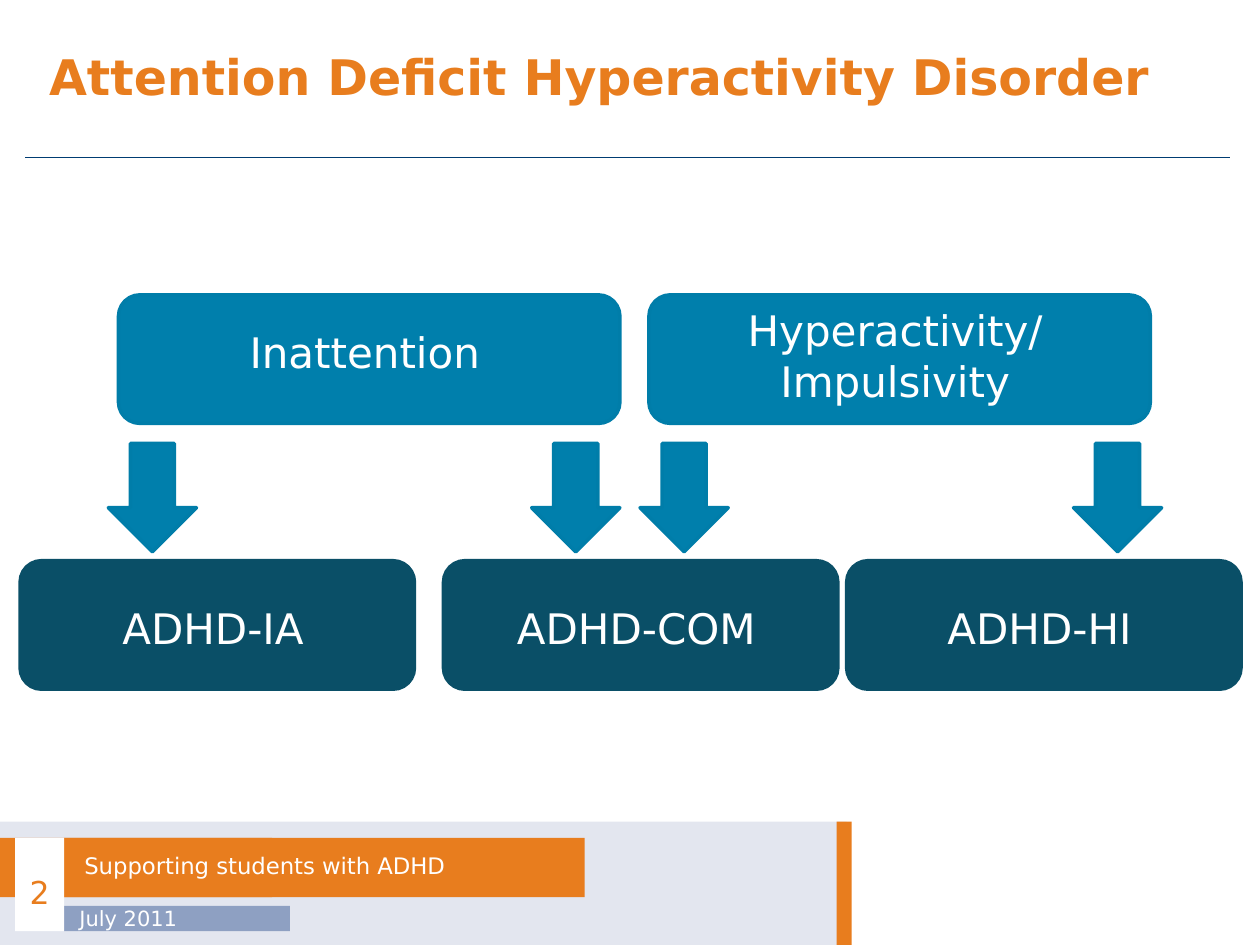
"""Build the slide on the types of Attention Deficit Hyperactivity Disorder."""
from typing import NamedTuple

import lxml.etree
import pptx
import pptx.dml.color
import pptx.enum.shapes
import pptx.enum.text
import pptx.oxml.ns
import pptx.util

Inches = pptx.util.Inches
Kind = pptx.enum.shapes.MSO_SHAPE
Align = pptx.enum.text.PP_ALIGN
Anchor = pptx.enum.text.MSO_ANCHOR

FONT = "DejaVu Sans"
ORANGE, WHITE, PALE, SLATE, NAVY = "E87D1E", "FFFFFF", "E3E6EF", "8EA0C2", "003C72"
BLUE, EDGE, DARK = "007FAC", "007DA9", "0A4F67"


class Box(NamedTuple):
    left: float
    top: float
    width: float
    height: float


class Style(NamedTuple):
    size: float
    color: str = WHITE
    bold: bool = False
    align: Align = Align.LEFT
    anchor: Anchor = Anchor.MIDDLE
    inset: tuple = (0.1, 0.05, 0.1, 0.05)
    space: float = 1.0


class Bar(NamedTuple):
    box: Box
    fill: str
    text: str = ""
    style: Style = Style(12)


class Node(NamedTuple):
    box: Box
    label: Box
    text: str
    fill: str
    edge: str


def tint(code: str) -> pptx.dml.color.RGBColor:
    """Turn a hex string into a colour."""
    return pptx.dml.color.RGBColor.from_string(code)


def place(box: Box) -> list:
    """Give the box as lengths."""
    return [Inches(n) for n in box]


def write(shape, text: str, style: Style) -> None:
    """Set one paragraph of text in a shape."""
    frame = shape.text_frame
    frame.word_wrap = True
    frame.vertical_anchor = style.anchor
    (frame.margin_left, frame.margin_top,
     frame.margin_right, frame.margin_bottom) = [Inches(n) for n in style.inset]
    para = frame.paragraphs[0]
    para.alignment = style.align
    para.line_spacing = style.space
    run = para.add_run()
    run.text = text
    run.font.name = FONT
    run.font.size = pptx.util.Pt(style.size)
    run.font.bold = style.bold
    run.font.color.rgb = tint(style.color)


def draw(slide, kind: Kind, box: Box, fill: str, edge: str = ""):
    """Add a flat shape, with an outline if an edge colour is given."""
    shape = slide.shapes.add_shape(kind, *place(box))
    shape.shadow.inherit = False
    shape.fill.solid()
    shape.fill.fore_color.rgb = tint(fill)
    if edge:
        shape.line.color.rgb = tint(edge)
        shape.line.width = pptx.util.Pt(2)
    else:
        shape.line.fill.background()
    return shape


def label(slide, box: Box, text: str, style: Style) -> None:
    """Add a text box."""
    write(slide.shapes.add_textbox(*place(box)), text, style)


def rule(slide, left: float, right: float, top: float) -> None:
    """Add the thin line under the title."""
    line = slide.shapes.add_connector(
        pptx.enum.shapes.MSO_CONNECTOR.STRAIGHT,
        Inches(left), Inches(top), Inches(right), Inches(top))
    line.line.color.rgb = tint(NAVY)
    line.line.width = pptx.util.Pt(0.5)
    lxml.etree.SubElement(line.element.spPr, pptx.oxml.ns.qn("a:effectLst"))


def band(slide, bar: Bar) -> None:
    """Add a footer bar with its text."""
    shape = draw(slide, Kind.RECTANGLE, bar.box, bar.fill)
    if bar.text:
        write(shape, bar.text, bar.style)


def card(slide, node: Node) -> None:
    """Add a rounded box and its centred label."""
    draw(slide, Kind.ROUNDED_RECTANGLE, node.box, node.fill, node.edge)
    label(slide, node.label, node.text, Style(24, align=Align.CENTER, anchor=Anchor.TOP))


def trait(left: float, top: float, height: float, text: str) -> Node:
    """Describe a box of the upper row."""
    return Node(Box(left, 2.34, 3.98, 1.02), Box(left + 0.08, top, 3.75, height),
                text, BLUE, EDGE)


def kind(left: float, text: str) -> Node:
    """Describe a box of the lower row."""
    return Node(Box(left, 4.45, 3.13, 1.02), Box(left + 0.06, 4.73, 2.94, 0.5),
                text, DARK, DARK)


BARS = [
    Bar(Box(0, 6.52, 6.72, 0.98), PALE),
    Bar(Box(0, 6.65, 2.16, 0.47), ORANGE),
    Bar(Box(6.72, 6.52, 3.28, 0.98), WHITE),
    Bar(Box(6.64, 6.52, 0.12, 0.98), ORANGE),
    Bar(Box(0.51, 7.19, 1.79, 0.2), SLATE, "July 2011",
        Style(12, inset=(0.12, 0, 0.12, 0))),
    Bar(Box(0.51, 6.65, 4.13, 0.47), ORANGE, "Supporting students with ADHD",
        Style(13, inset=(0.16, 0, 0.16, 0), space=0.9)),
    Bar(Box(0.12, 6.65, 0.39, 0.74), WHITE, "2",
        Style(18, ORANGE, align=Align.CENTER, inset=(0, 0.12, 0, 0))),
]
TRAITS = [
    trait(0.94, 2.54, 0.5, "Inattention"),
    trait(5.15, 2.37, 0.91, "Hyperactivity/ Impulsivity"),
]
KINDS = [kind(0.16, "ADHD-IA"), kind(3.52, "ADHD-COM"), kind(6.72, "ADHD-HI")]
ARROWS = [0.86, 4.22, 5.08, 8.52]


def main() -> None:
    """Draw the slide and save it."""
    deck = pptx.Presentation()
    deck.slide_width, deck.slide_height = Inches(10), Inches(7.5)
    slide = deck.slides.add_slide(deck.slide_layouts[6])
    for bar in BARS:
        band(slide, bar)
    rule(slide, 0.2, 9.76, 1.25)
    label(slide, Box(0, 0, 10, 1.25), "Attention Deficit Hyperactivity Disorder",
          Style(28, ORANGE, bold=True, inset=(0.39, 0.2, 0.39, 0.16), space=0.8))
    for node in TRAITS:
        card(slide, node)
    for left in ARROWS:
        draw(slide, Kind.DOWN_ARROW, Box(left, 3.52, 0.7, 0.86), BLUE, EDGE)
    for node in KINDS:
        card(slide, node)
    deck.save("out.pptx")


if __name__ == "__main__":
    main()
